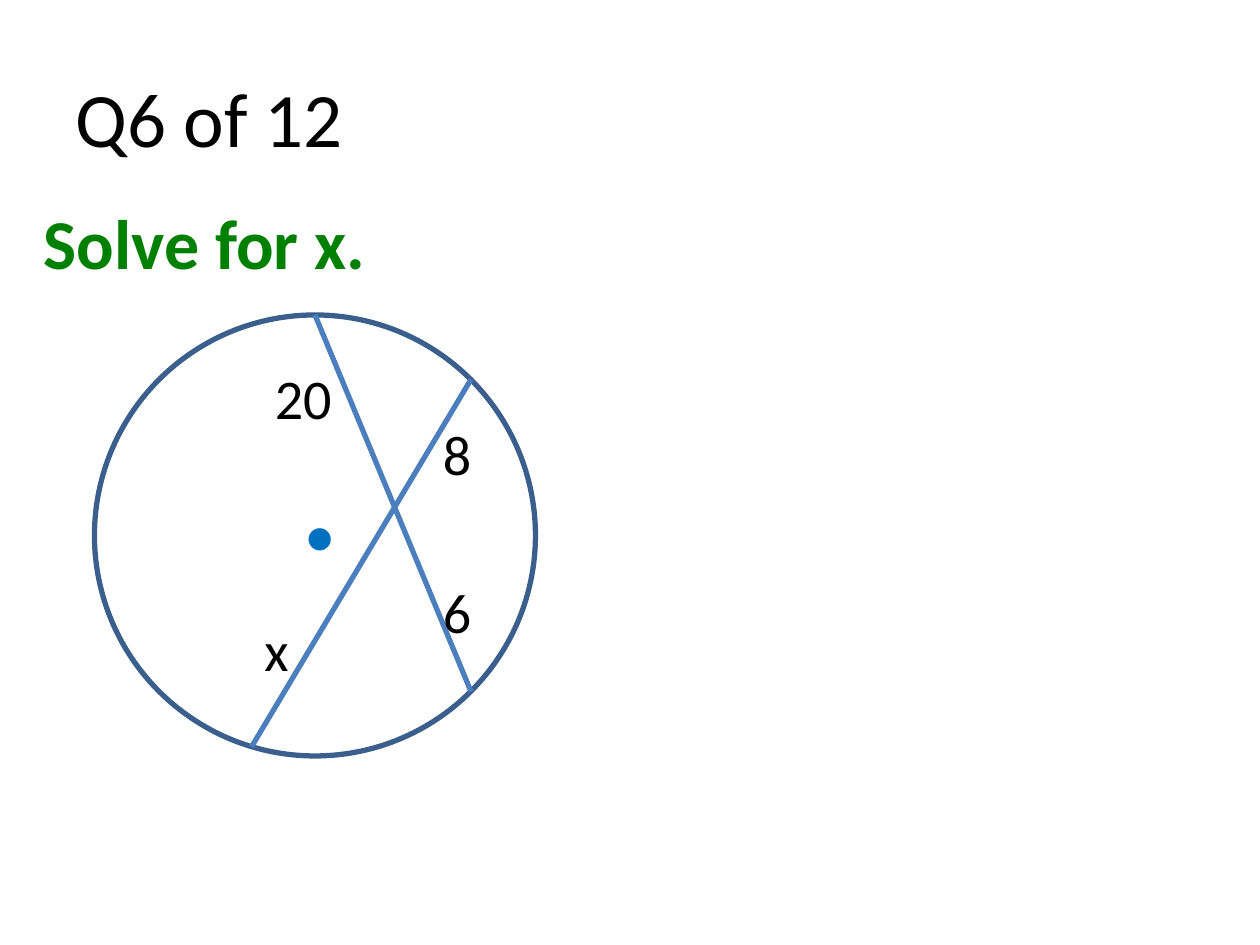
from math import cos, radians, sin

from lxml import etree
from pptx import Presentation
from pptx.dml.color import RGBColor
from pptx.enum.shapes import MSO_CONNECTOR as Connector, MSO_SHAPE as Shape
from pptx.enum.text import MSO_ANCHOR as Anchor, MSO_AUTO_SIZE as AutoSize
from pptx.oxml.ns import qn
from pptx.util import Inches, Pt

COLUMNS, ROWS = 120, 90
BLACK, GREEN, BLUE = "000000", "008000", "0070C0"
OUTLINE, CHORD = "3A5F8C", "4B7EBC"


def color(hex_code):
    return RGBColor.from_string(hex_code)


class SlideBuilder:
    """Places elements on the slide by grid columns and rows."""

    font = "Calibri"
    line_width = Pt(3)

    def __init__(self, prs):
        self.slide = prs.slides.add_slide(prs.slide_layouts[6])
        self.column = prs.slide_width / COLUMNS
        self.row = prs.slide_height / ROWS

    def grid(self, *values):
        """Turn alternating column and row counts into lengths."""
        units = (self.column, self.row) * (len(values) // 2)
        return [round(value * unit) for value, unit in zip(values, units)]

    def style_line(self, line, hex_code):
        line.color.rgb = color(hex_code)
        line.width = self.line_width

    def text(self, box, content, size, hex_code=BLACK, bold=False,
             anchor=Anchor.TOP, wrap=True, grow=False):
        tf = self.slide.shapes.add_textbox(*self.grid(*box)).text_frame
        tf.word_wrap = wrap
        tf.vertical_anchor = anchor
        tf.auto_size = AutoSize.SHAPE_TO_FIT_TEXT if grow else AutoSize.NONE
        r = tf.paragraphs[0].add_run()
        r.text = content
        r.font.name, r.font.size, r.font.bold = self.font, Pt(size), bold
        r.font.color.rgb = color(hex_code)

    def circle(self, center, radius):
        x, y = center
        box = self.grid(x - radius, y - radius, 2 * radius, 2 * radius)
        sp = self.slide.shapes.add_shape(Shape.OVAL, *box)
        sp.shadow.inherit = False
        sp.fill.background()
        self.style_line(sp.line, OUTLINE)

    def chord(self, center, radius, *angles):
        """Join two points of a circle, in degrees clockwise from the right."""
        ends = []
        for angle in map(radians, angles):
            ends += [center[0] + radius * cos(angle),
                     center[1] + radius * sin(angle)]
        line = self.slide.shapes.add_connector(Connector.STRAIGHT,
                                               *self.grid(*ends))
        self.style_line(line.line, CHORD)
        etree.SubElement(line._element.spPr, qn("a:effectLst"))


def main():
    prs = Presentation()
    prs.slide_width, prs.slide_height = Inches(10), Inches(7.5)
    s = SlideBuilder(prs)

    s.text((6, 3.6, 108, 15), "Q6 of 12", 44, anchor=Anchor.MIDDLE)
    s.text((3, 17, 112, 12), "Solve for x.", 40, GREEN, bold=True,
           anchor=Anchor.MIDDLE)

    center, radius = (30, 51), 21
    s.circle(center, radius)
    s.chord(center, radius, -90, 45)
    s.text((27.8, 46.5, 5.2, 8.5), "•", 36, BLUE, wrap=False, grow=True)
    s.chord(center, radius, 106.7, -45)

    segments = [("8", 41, 39.4, 13), ("6", 41, 54.4, 8),
                ("20", 25, 34, 11), ("x", 24, 58, 13)]
    for label, left, top, width in segments:
        s.text((left, top, width, 7.7), label, 32, grow=True)

    prs.save("out.pptx")


if __name__ == "__main__":
    main()
